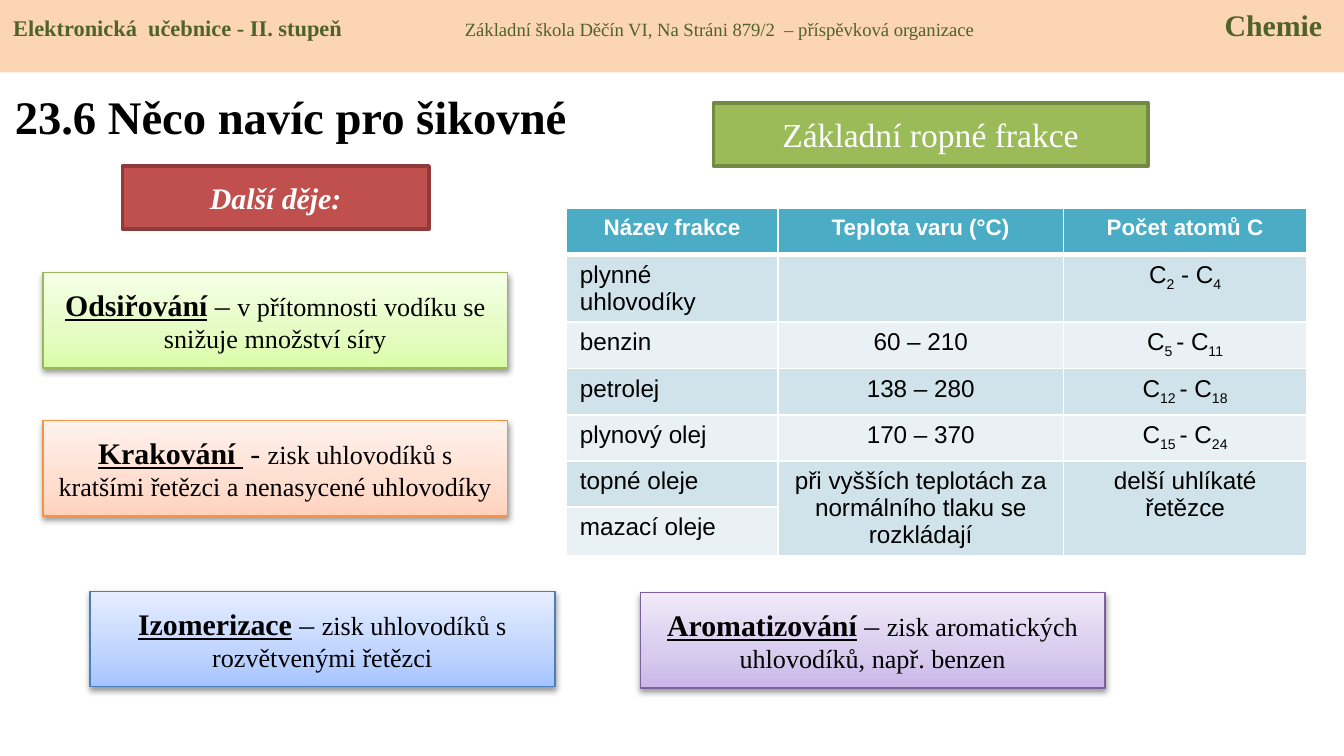
from lxml.etree import SubElement
from pptx import Presentation
from pptx.dml.color import RGBColor
from pptx.enum.shapes import MSO_SHAPE as Shape
from pptx.enum.text import MSO_ANCHOR as Anchor, PP_ALIGN as Align
from pptx.oxml.ns import qn
from pptx.util import Pt

SERIF = "Times New Roman"
SANS = "Arial"
BLACK = "000000"
WHITE = "FFFFFF"


def color(value):
    return RGBColor.from_string(value)


def add_node(parent, tag, **attributes):
    return SubElement(parent, qn(tag), {name: str(value) for name, value in attributes.items()})


class SlideBuilder:
    def __init__(self, page):
        self.page = page

    def add_span(self, para, text, size, ink=BLACK, font=SERIF,
                 bold=False, italic=False, underline=False, subscript=False):
        span = para.add_run()
        span.text = text
        span.font.name = font
        span.font.size = Pt(size)
        span.font.bold = bold
        span.font.italic = italic
        span.font.underline = underline
        span.font.color.rgb = color(ink)
        if subscript:
            span._r.get_or_add_rPr().set("baseline", "-25000")

    def title(self, text, left, top, width, height):
        box = self.page.shapes.title
        box.left, box.top, box.width, box.height = map(Pt, (left, top, width, height))
        box.text_frame.vertical_anchor = Anchor.MIDDLE
        para = box.text_frame.paragraphs[0]
        para.alignment = Align.LEFT
        self.add_span(para, text, 25, bold=True)

    def box(self, left, top, width, height, fill=None, line=None, line_width=2):
        box = self.page.shapes.add_shape(Shape.RECTANGLE, *map(Pt, (left, top, width, height)))
        box.shadow.inherit = False
        if fill:
            box.fill.solid()
            box.fill.fore_color.rgb = color(fill)
        if line:
            box.line.color.rgb = color(line)
            box.line.width = Pt(line_width)
        else:
            box.line.fill.background()
        box.text_frame.word_wrap = True
        box.text_frame.vertical_anchor = Anchor.MIDDLE
        box.text_frame.paragraphs[0].alignment = Align.CENTER
        return box

    def header(self, height, fill, ink, parts, tabs):
        box = self.box(0, 0, 720, height, fill)
        box.text_frame.vertical_anchor = Anchor.TOP
        para = box.text_frame.paragraphs[0]
        para.alignment = Align.LEFT
        tab_list = add_node(para._p.get_or_add_pPr(), "a:tabLst")
        for position in tabs:
            add_node(tab_list, "a:tab", pos=int(Pt(position)), algn="l")
        for index, (text, size, bold) in enumerate(parts):
            self.add_span(para, "\t" + text if index else text, size, ink, bold=bold)

    def label(self, text, left, top, width, fill, line, size, **style):
        box = self.box(left, top, width, 33.8, fill, line)
        self.add_span(box.text_frame.paragraphs[0], text, size, WHITE, **style)

    def card(self, left, top, term, dash, meaning, stops, line):
        box = self.box(left, top, 249.1, 51.1, line=line, line_width=0.75)
        box.fill.gradient()
        box.fill.gradient_angle = 90
        stop_list = box._element.spPr.find(qn("a:gradFill")).find(qn("a:gsLst"))
        stop_list.clear()
        for position, value in zip((0, 35, 100), stops):
            stop = add_node(stop_list, "a:gs", pos=position * 1000)
            add_node(stop, "a:srgbClr", val=value)
        effects = box._element.spPr.find(qn("a:effectLst"))
        shadow = add_node(effects, "a:outerShdw", blurRad=int(Pt(3.1)), dist=int(Pt(1.6)),
                          dir=5400000, rotWithShape=0)
        shade = add_node(shadow, "a:srgbClr", val=BLACK)
        add_node(shade, "a:alpha", val=38000)
        para = box.text_frame.paragraphs[0]
        self.add_span(para, term, 16, bold=True, underline=True)
        self.add_span(para, dash, 16)
        self.add_span(para, meaning, 14)

    def style_cell(self, cell, fill, bottom):
        properties = cell._tc.get_or_add_tcPr()
        for side, width in (("L", 1), ("R", 1), ("T", 1), ("B", bottom)):
            edge = add_node(properties, f"a:ln{side}", w=int(Pt(width)))
            add_node(add_node(edge, "a:solidFill"), "a:srgbClr", val=WHITE)
        cell.fill.solid()
        cell.fill.fore_color.rgb = color(fill)

    def table(self, left, top, widths, row_height, rows, merges):
        frame = self.page.shapes.add_table(
            len(rows), len(widths), Pt(left), Pt(top), Pt(sum(widths)), Pt(row_height * len(rows)))
        table = frame.table
        table.horz_banding = False
        for column, width in zip(table.columns, widths):
            column.width = Pt(width)
        for row_index, row in enumerate(rows):
            head = row_index == 0
            table.rows[row_index].height = Pt(row_height)
            fill = "4BACC6" if head else ("E9F1F5", "D0E3EA")[row_index % 2]
            for column_index, parts in enumerate(row):
                cell = table.cell(row_index, column_index)
                self.style_cell(cell, fill, 3 if head else 1)
                para = cell.text_frame.paragraphs[0]
                para.alignment = Align.CENTER if head or column_index else Align.LEFT
                for index, text in enumerate(parts):
                    self.add_span(para, text, 12 if head else 13, WHITE if head else BLACK,
                                  SANS, bold=head, subscript=index % 2 == 1)
        for first, last in merges:
            table.cell(*first).merge(table.cell(*last))


def main():
    deck = Presentation()
    deck.slide_width, deck.slide_height = Pt(720), Pt(405)
    slide = SlideBuilder(deck.slides.add_slide(deck.slide_layouts[5]))

    slide.title("23.6 Něco navíc pro šikovné", 0.7, 38.9, 408, 46.8)
    slide.header(38.9, "FCD5B5", "4F6228", [
        ("Elektronická  učebnice - II. stupeň", 12, True),
        ("Základní škola Děčín VI, Na Stráni 879/2  – příspěvková organizace", 10, False),
        ("Chemie", 16, True),
    ], (242, 649))
    slide.table(303.5, 111.6, (113.2, 153, 130.4), 24.8, [
        (["Název frakce"], ["Teplota varu (°C)"], ["Počet atomů C"]),
        (["plynné uhlovodíky"], [], ["C", "2", " - C", "4"]),
        (["benzin"], ["60 – 210"], ["C", "5 ", "- C", "11"]),
        (["petrolej"], ["138 – 280"], ["C", "12 ", "- C", "18"]),
        (["plynový olej"], ["170 – 370"], ["C", "15 ", "- C", "24"]),
        (["topné oleje"], ["při vyšších teplotách za normálního tlaku se rozkládají"],
         ["delší uhlíkaté řetězce"]),
        (["mazací oleje"], [], []),
    ], [((5, column), (6, column)) for column in (1, 2)])

    slide.label("Základní ropné frakce", 382.3, 55.2, 232.6, "9BBB59", "738A42", 18)
    slide.label("Další děje:", 65.6, 89, 164.2, "C0504D", "8E3B39", 16, bold=True, italic=True)
    slide.card(23, 146, "Odsiřování", " – ", "v přítomnosti vodíku se snižuje množství síry",
               ("DAFDA7", "E4FCC2", "F5FFE7"), "98B955")
    slide.card(23, 225.4, "Krakování ", " - ",
               "zisk uhlovodíků s kratšími řetězci a nenasycené uhlovodíky",
               ("FFD2BD", "FFDED0", "FFF2ED"), "F69240")
    slide.card(48.2, 316.8, "Izomerizace", " – ", "zisk uhlovodíků s rozvětvenými řetězci",
               ("A4C4FF", "BFD4FF", "E6EEFF"), "4B7EBC")
    slide.card(343, 317.5, "Aromatizování", " – ", "zisk aromatických uhlovodíků, např. benzen",
               ("C9B5E8", "D8CBEE", "F0EAF9"), "7D60A0")
    deck.save("out.pptx")


if __name__ == "__main__":
    main()
